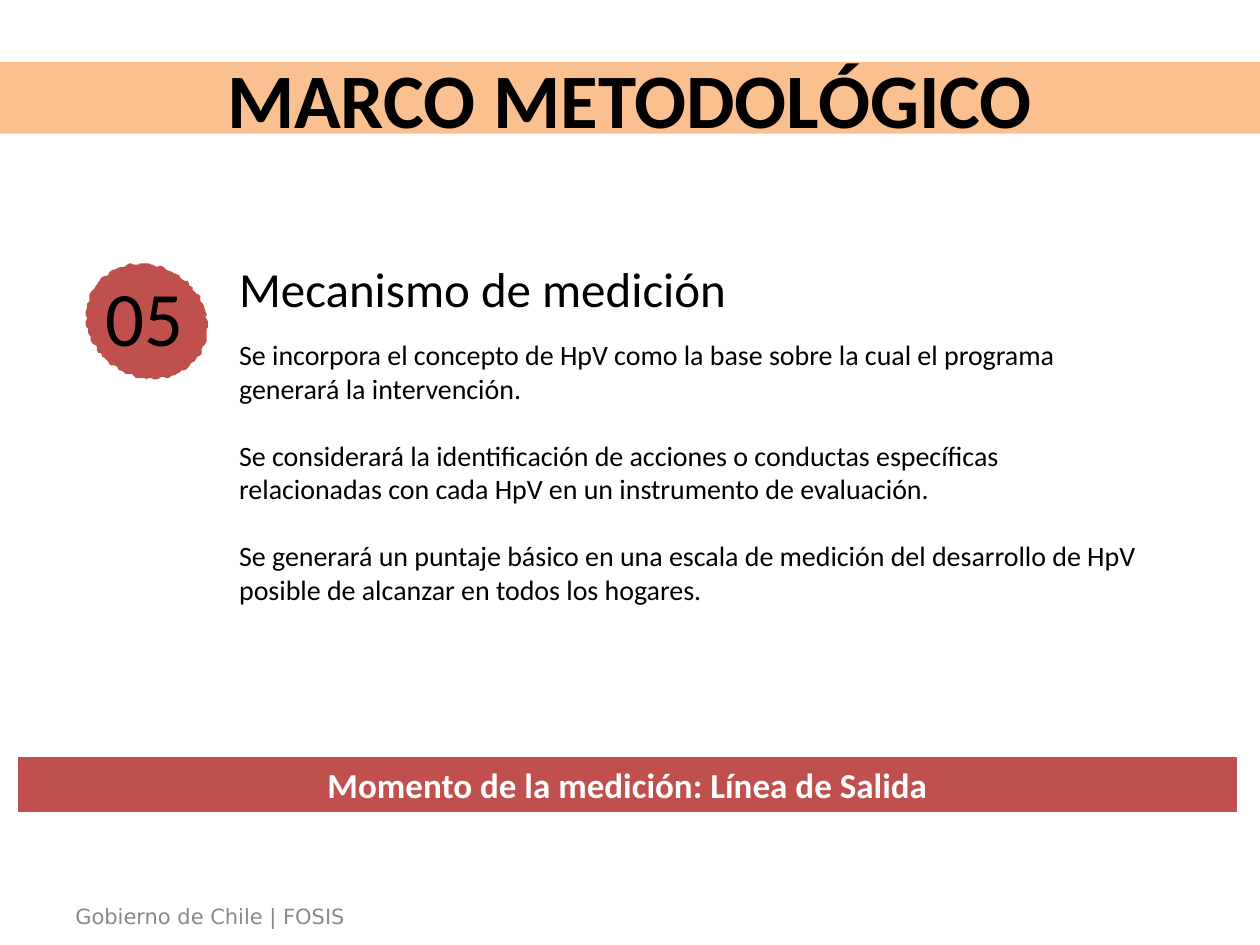
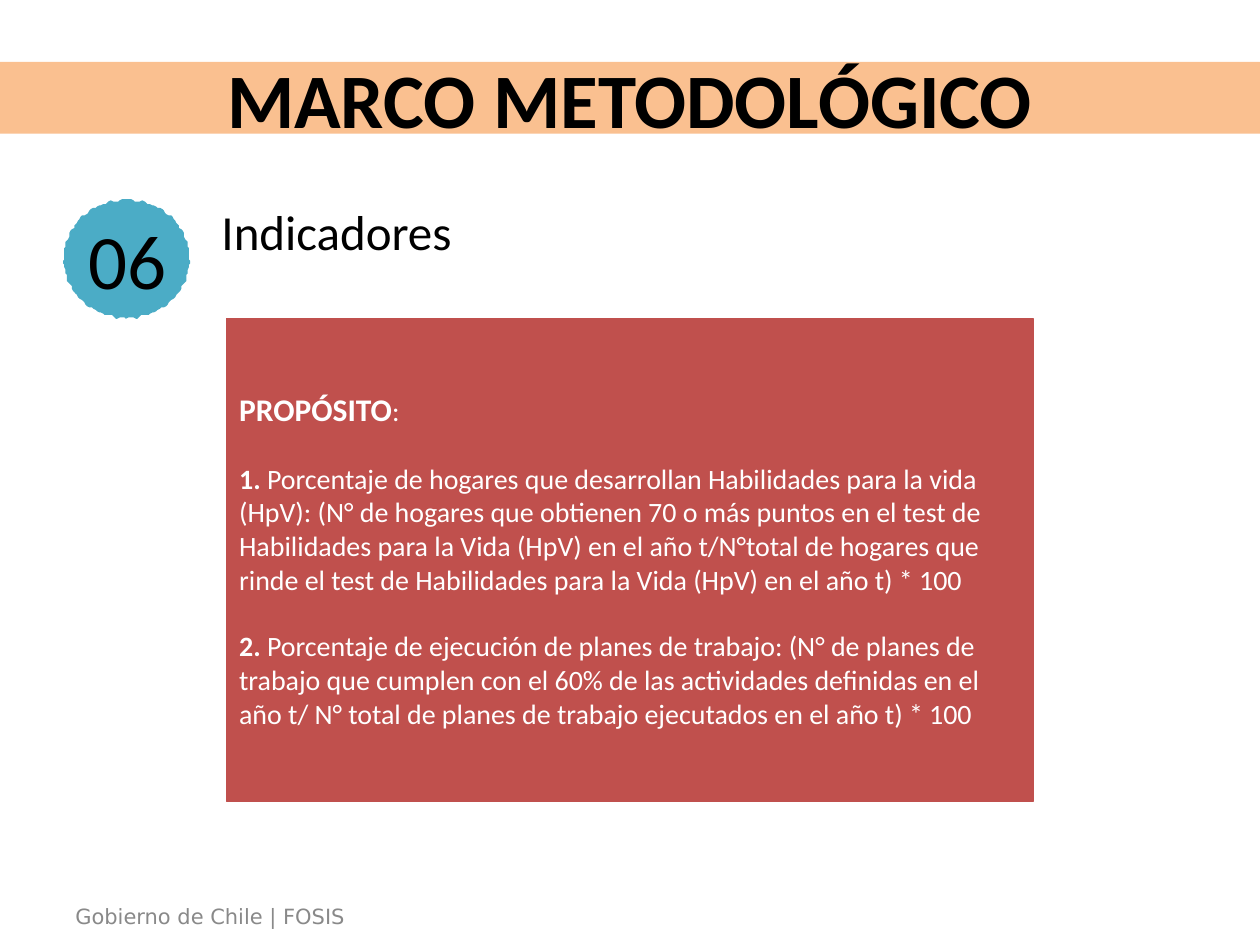
from dataclasses import dataclass
from math import cos, sin, tau

from pptx import Presentation
from pptx.dml.color import RGBColor
from pptx.enum.shapes import MSO_SHAPE
from pptx.enum.text import MSO_ANCHOR, MSO_AUTO_SIZE, PP_ALIGN
from pptx.util import Pt

PX = 9144
WIDTH, HEIGHT = 1000, 750
PAD = 10


@dataclass(frozen=True)
class Theme:
    """Colours, fonts and type sizes of the deck."""
    ink: str = "000000"
    paper: str = "FFFFFF"
    grey: str = "898989"
    peach: str = "FAC090"
    red: str = "C0504D"
    teal: str = "4BACC6"
    font: str = "Calibri"
    small: str = "DejaVu Sans"
    big: int = 44
    head: int = 28
    bar: int = 20
    lead: int = 18
    body: int = 16
    foot: int = 12
    gap: int = 19
    edge: float = 0.75


LOOK = Theme()
BOLD = {"bold": True}
LEAD = {"bold": True, "size": Pt(LOOK.lead)}
MIDDLE = {"align": PP_ALIGN.CENTER}

MEASURE = [
    "Se incorpora el concepto de HpV como la base sobre la cual el programa "
    "generará la intervención.",
    "Se considerará la identificación de acciones o conductas específicas "
    "relacionadas con cada HpV en un instrumento de evaluación.",
    "Se generará un puntaje básico en una escala de medición del desarrollo de "
    "HpV posible de alcanzar en todos los hogares.",
]
GOALS = [
    [("PROPÓSITO", LEAD), (":", {})],
    [("1. ", BOLD),
     ("Porcentaje de hogares que desarrollan Habilidades para la vida (HpV): "
      "(N° de hogares que obtienen 70 o más puntos en el test de Habilidades para "
      "la Vida (HpV) en el año t/N°total de hogares que rinde el test de "
      "Habilidades para la Vida (HpV) en el año t) * 100", {})],
    [("2. ", BOLD),
     ("Porcentaje de ejecución de planes de trabajo: (N° de planes de trabajo que "
      "cumplen con el 60% de las actividades definidas en el año t/ N° total de "
      "planes de trabajo ejecutados en el año t) * 100", {})],
]


def apply(item, values):
    """Set each attribute named in a dict."""
    for key, value in values.items():
        setattr(item, key, value)


def place(spot):
    """Turn px lengths into EMU."""
    return [n * PX for n in spot]


def paint(shape, color, edge=None):
    """Fill a shape, with an outline only if an edge colour is given."""
    shape.fill.solid()
    shape.fill.fore_color.rgb = RGBColor.from_string(color)
    if edge:
        shape.line.color.rgb = RGBColor.from_string(edge)
        shape.line.width = Pt(LOOK.edge)
    else:
        shape.line.fill.background()


def write(shape, paras, size, color=LOOK.ink, align=PP_ALIGN.LEFT, **font):
    """Write paragraphs of plain text or of (text, format) runs."""
    frame = shape.text_frame
    sides = ("margin_left", "margin_top", "margin_right", "margin_bottom")
    apply(frame, {"word_wrap": True, "auto_size": MSO_AUTO_SIZE.NONE,
                  "vertical_anchor": MSO_ANCHOR.MIDDLE,
                  **dict.fromkeys(sides, PAD * PX)})
    base = {"name": LOOK.font, "size": Pt(size), "bold": False, **font}
    for i, runs in enumerate(paras):
        para = frame.add_paragraph() if i else frame.paragraphs[0]
        apply(para, {"alignment": align, "space_before": Pt(LOOK.gap if i else 0)})
        for text, extra in [(runs, {})] if isinstance(runs, str) else runs:
            run = para.add_run()
            run.text = text
            apply(run.font, {**base, **extra})
            run.font.color.rgb = RGBColor.from_string(color)


def label(slide, spot, paras, size, **style):
    """Add a text box."""
    box = slide.shapes.add_textbox(*place(spot))
    write(box, paras, size, **style)
    return box


def panel(slide, spot, paras, size, **style):
    """Add a red panel with white text."""
    box = slide.shapes.add_shape(MSO_SHAPE.RECTANGLE, *place(spot))
    box.shadow.inherit = False
    paint(box, LOOK.red, LOOK.red)
    write(box, paras, size, color=LOOK.paper, **style)


def ripple(spot, lean, steps=180):
    """Return points of an ellipse with a rough rim, leaning to one diagonal."""
    left, top, width, height = spot
    points = []
    for step in range(steps):
        turn = tau * step / steps
        reach = (0.99 + lean * sin(2 * turn)
                 + 0.01 * sin(23 * turn) + 0.01 * sin(37 * turn))
        points.append((left + width / 2 * (1 + reach * cos(turn)),
                       top + height / 2 * (1 + reach * sin(turn))))
    return points


def blob(slide, spot, color, lean):
    """Add a rough-edged spot of colour."""
    first, *rest = ripple(spot, lean)
    pen = slide.shapes.build_freeform(*first, scale=PX)
    pen.add_line_segments(rest, close=True)
    shape = pen.convert_to_shape()
    shape.shadow.inherit = False
    paint(shape, color)


def section(slide, left, top, number, heading):
    """Add a section number with its heading to the right."""
    label(slide, (left, top, 94, 53), [number], LOOK.big, **MIDDLE)
    label(slide, (left + 112, top - 17, 447, 43), [heading], LOOK.head)


def banner(slide):
    """Turn the title placeholder into a band across the slide."""
    title = slide.shapes.title
    sides = ("left", "top", "width", "height")
    apply(title, dict(zip(sides, place((0, 49, WIDTH, 57)))))
    paint(title, LOOK.peach)
    write(title, ["MARCO METODOLÓGICO"], LOOK.big, **MIDDLE, **BOLD)


def footer(slide):
    """Add the footer line."""
    foot = label(slide, (50, 712, 243, 30), ["Gobierno de Chile | FOSIS"],
                 LOOK.foot, color=LOOK.grey, name=LOOK.small)
    apply(foot.text_frame, {"word_wrap": False, "margin_top": PAD // 2 * PX,
                            "margin_bottom": PAD // 2 * PX,
                            "auto_size": MSO_AUTO_SIZE.SHAPE_TO_FIT_TEXT})


def start(deck):
    """Add a slide with the title band and the footer."""
    slide = deck.slides.add_slide(deck.slide_layouts[5])
    banner(slide)
    footer(slide)
    return slide


def method(deck):
    """Build the slide on how results are measured."""
    slide = start(deck)
    blob(slide, (68, 209, 97, 92), LOOK.red, lean=0.05)
    section(slide, 68, 224, "05", "Mecanismo de medición")
    label(slide, (180, 252, 736, 245), MEASURE, LOOK.body)
    panel(slide, (15, 601, 966, 43), ["Momento de la medición: Línea de Salida"],
          LOOK.bar, **MIDDLE, **BOLD)


def target(deck):
    """Build the slide on indicators."""
    slide = start(deck)
    blob(slide, (50, 158, 101, 95), LOOK.teal, lean=0)
    section(slide, 54, 179, "06", "Indicadores")
    panel(slide, (180, 253, 640, 383), GOALS, LOOK.body)


def main():
    """Build both slides and save the deck."""
    deck = Presentation()
    apply(deck, {"slide_width": WIDTH * PX, "slide_height": HEIGHT * PX})
    method(deck)
    target(deck)
    deck.save("out.pptx")


if __name__ == "__main__":
    main()
